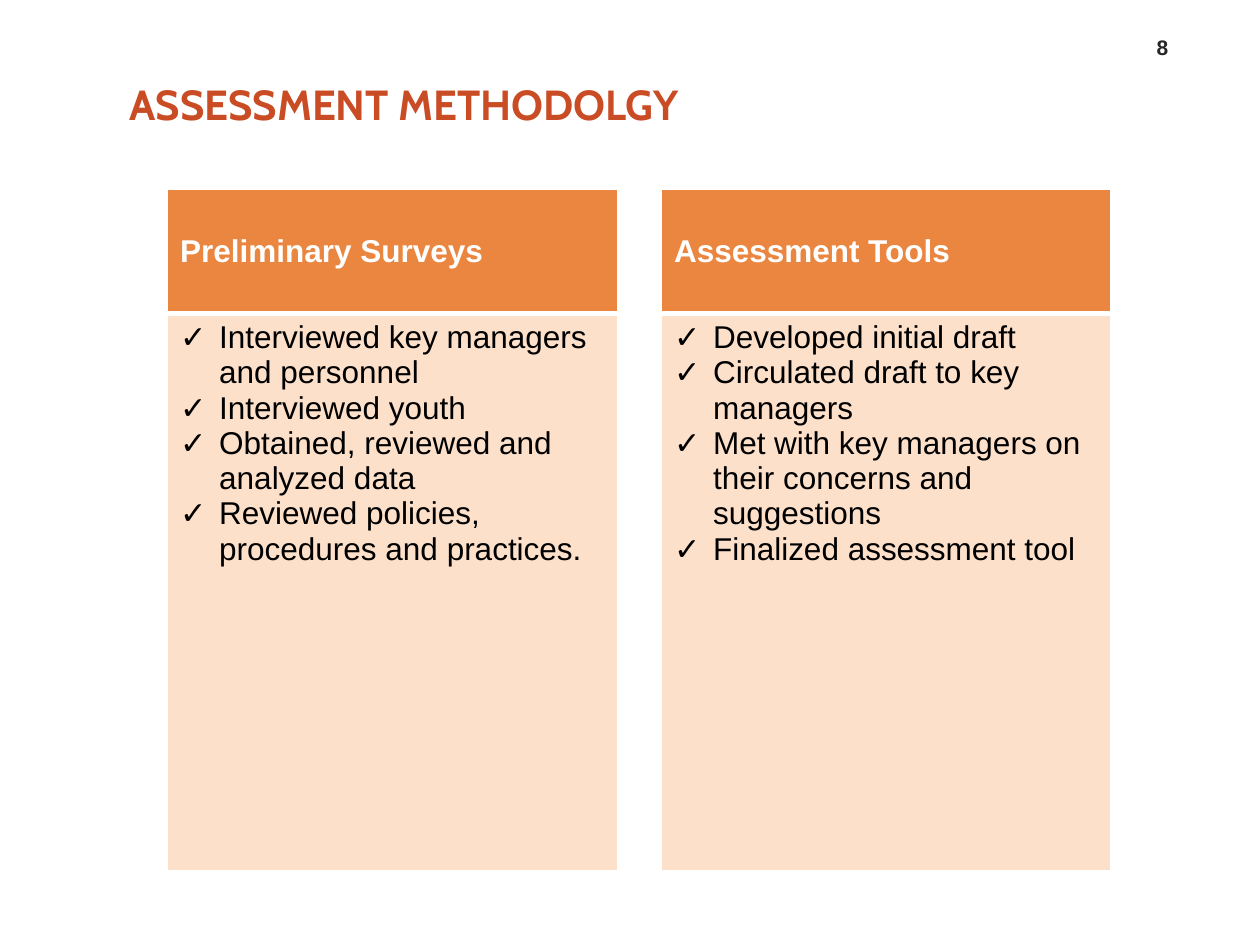
from dataclasses import dataclass

from lxml.etree import SubElement
from pptx import Presentation
from pptx.dml.color import RGBColor
from pptx.enum.text import MSO_ANCHOR, PP_ALIGN
from pptx.oxml.ns import qn
from pptx.util import Inches, Pt

RUST = RGBColor(0xC9, 0x4C, 0x25)
ORANGE = RGBColor(0xEA, 0x86, 0x40)
PEACH = RGBColor(0xFD, 0xE0, 0xCA)
CHARCOAL = RGBColor(0x26, 0x26, 0x26)
BLACK = RGBColor(0, 0, 0)
WHITE = RGBColor(0xFF, 0xFF, 0xFF)

COLUMN_WIDTHS = (3.57, 0.35, 3.57)
ROW_HEIGHTS = (0.99, 4.42)
CHECK_INDENT = Inches(0.31)


@dataclass(frozen=True)
class Topic:
    column: int
    heading: str
    steps: tuple[str, ...]


TOPICS = (
    Topic(0, "Preliminary Surveys", (
        "Interviewed key managers and personnel",
        "Interviewed youth",
        "Obtained, reviewed and analyzed data",
        "Reviewed policies, procedures and practices.",
    )),
    Topic(2, "Assessment Tools", (
        "Developed initial draft",
        "Circulated draft to key managers",
        "Met with key managers on their concerns and suggestions",
        "Finalized assessment tool",
    )),
)


def write_paragraph(paragraph, text: str, *, size=18, color=BLACK, bold=False,
                    font="Arial", align=PP_ALIGN.LEFT) -> None:
    paragraph.alignment = align
    run = paragraph.add_run()
    run.text = text
    run.font.name = font
    run.font.size = Pt(size)
    run.font.bold = bold
    run.font.color.rgb = color


def add_label(slide, box: tuple[float, ...], text: str, *, anchor, side_inset=0.1, indent=0.0,
              **text_format):
    frame = slide.shapes.add_textbox(*map(Inches, box)).text_frame
    frame.word_wrap = True
    frame.vertical_anchor = anchor
    frame.margin_left = frame.margin_right = Inches(side_inset)
    paragraph = frame.paragraphs[0]
    paragraph._p.get_or_add_pPr().set("marL", str(Inches(indent)))
    write_paragraph(paragraph, text, **text_format)


def add_check_mark(paragraph) -> None:
    properties = paragraph._p.get_or_add_pPr()
    properties.set("marL", str(CHECK_INDENT))
    properties.set("indent", str(-CHECK_INDENT))
    SubElement(properties, qn("a:buFont"), typeface="Arial")
    SubElement(properties, qn("a:buChar"), char="✓")


def style_cell(cell, fill: RGBColor, bottom_width: float, top_width: float) -> None:
    """Fill the cell and rule its four sides in white."""
    cell.fill.solid()
    cell.fill.fore_color.rgb = fill
    properties = cell._tc.get_or_add_tcPr()
    widths = {"a:lnL": 1, "a:lnR": 1, "a:lnT": top_width, "a:lnB": bottom_width}
    for position, (side, width) in enumerate(widths.items()):
        line = SubElement(properties, qn(side), w=str(Pt(width)))
        SubElement(SubElement(line, qn("a:solidFill")), qn("a:srgbClr"), val=str(WHITE))
        properties.insert(position, line)


def add_topic_table(slide) -> None:
    frame = slide.shapes.add_table(len(ROW_HEIGHTS), len(COLUMN_WIDTHS), Inches(1.33), Inches(1.5),
                                   Inches(sum(COLUMN_WIDTHS)), Inches(sum(ROW_HEIGHTS)))
    table = frame.table
    for column, width in zip(table.columns, COLUMN_WIDTHS):
        column.width = Inches(width)
    for row, height in zip(table.rows, ROW_HEIGHTS):
        row.height = Inches(height)

    topic_columns = {topic.column for topic in TOPICS}
    for column in range(len(COLUMN_WIDTHS)):
        filled = column in topic_columns
        style_cell(table.cell(0, column), ORANGE if filled else WHITE, 3, 1)
        style_cell(table.cell(1, column), PEACH if filled else WHITE, 1, 3)

    for topic in TOPICS:
        heading = table.cell(0, topic.column)
        heading.vertical_anchor = MSO_ANCHOR.MIDDLE
        write_paragraph(heading.text_frame.paragraphs[0], topic.heading, color=WHITE, bold=True)
        body = table.cell(1, topic.column).text_frame
        for number, step in enumerate(topic.steps):
            paragraph = body.add_paragraph() if number else body.paragraphs[0]
            add_check_mark(paragraph)
            write_paragraph(paragraph, step)


def main() -> None:
    presentation = Presentation()
    presentation.slide_width = Inches(10)
    presentation.slide_height = Inches(7.5)
    slide = presentation.slides.add_slide(presentation.slide_layouts[6])
    add_label(slide, (0.83, 0.39, 4.76, 0.87), "ASSESSMENT METHODOLGY", anchor=MSO_ANCHOR.MIDDLE,
              side_inset=0, indent=0.2, size=24, color=RUST, bold=True, font="Cabin")
    add_label(slide, (8.95, 0.19, 0.55, 0.33), "8", anchor=MSO_ANCHOR.BOTTOM,
              size=12, color=CHARCOAL, bold=True, align=PP_ALIGN.CENTER)
    add_topic_table(slide)
    presentation.save("out.pptx")


if __name__ == "__main__":
    main()
